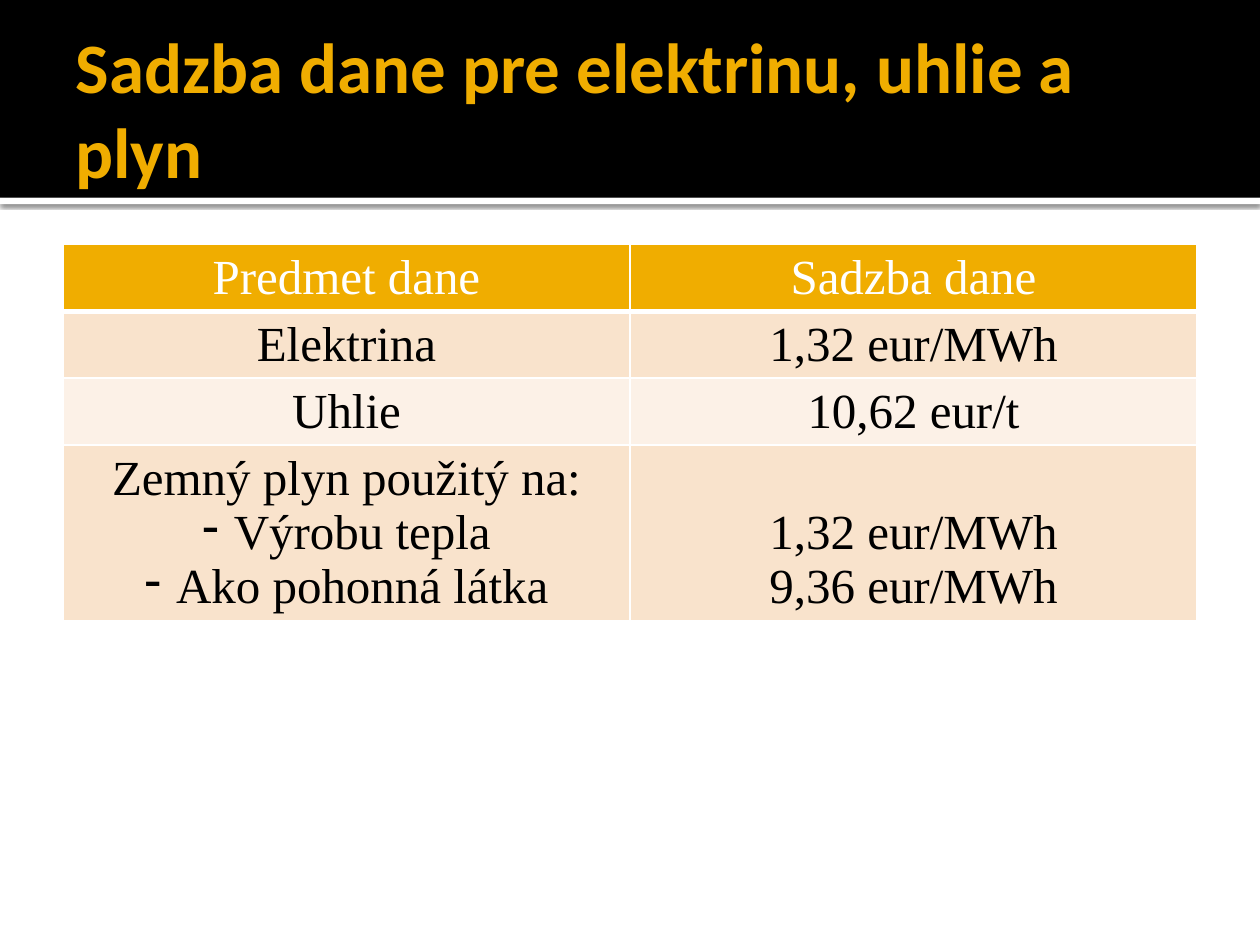
import pptx
import pptx.util
import pptx.dml.color
import pptx.enum.shapes
import pptx.enum.text
import pptx.oxml
import pptx.oxml.ns

Inches, Pt = pptx.util.Inches, pptx.util.Pt
ALIGN = pptx.enum.text.PP_ALIGN
ANCHOR = pptx.enum.text.MSO_ANCHOR
NS = pptx.oxml.ns.nsdecls("a")

BLACK, WHITE, GOLD = "000000", "FFFFFF", "F0AD00"
DARK, LIGHT = "F9E3CC", "FCF1E7"
ROWS = [
    (["Predmet dane"], ["Sadzba dane"]),
    (["Elektrina"], ["1,32 eur/MWh"]),
    (["Uhlie"], ["10,62 eur/t"]),
    (["Zemný plyn použitý na:", "- Výrobu tepla", "- Ako pohonná látka"],
     ["1,32 eur/MWh", "9,36 eur/MWh"]),
]
HEIGHTS = [0.53, 0.53, 0.53, 1.39]


def rgb(color):
    return pptx.dml.color.RGBColor.from_string(color)


def add_bar(slide, box, color):
    bar = slide.shapes.add_shape(
        pptx.enum.shapes.MSO_SHAPE.RECTANGLE, *map(Inches, box))
    bar.shadow.inherit = False
    bar.fill.solid()
    bar.fill.fore_color.rgb = rgb(color)
    bar.line.fill.background()
    return bar


def add_shadow(shape):
    effects = shape._element.spPr.find(pptx.oxml.ns.qn("a:effectLst"))
    effects.append(pptx.oxml.parse_xml(
        f'<a:outerShdw {NS} blurRad="{Pt(2.5)}" dist="{Pt(0.8)}" dir="5400000" '
        f'algn="t" rotWithShape="0"><a:srgbClr val="{BLACK}">'
        '<a:alpha val="60000"/></a:srgbClr></a:outerShdw>'))


def add_header(slide, box, text):
    left, top, width, height = box
    # White strip with a shadow under the black band
    add_shadow(add_bar(slide, (left, top + height, width, 0.05), WHITE))
    add_bar(slide, box, BLACK)

    # Title, brought in front of the band
    title = slide.shapes.title
    slide.shapes.element.append(title.element)
    title.left, title.top = Inches(left + 0.5), Inches(top + 0.17)
    title.width, title.height = Inches(width - 1), Inches(height - 0.2)
    frame = title.text_frame
    frame.text = text
    frame.word_wrap = True
    frame.auto_size = pptx.enum.text.MSO_AUTO_SIZE.NONE
    frame.vertical_anchor = ANCHOR.MIDDLE
    frame.margin_left = Inches(0.1)
    frame.margin_right = frame.margin_top = frame.margin_bottom = Inches(0.05)
    para = frame.paragraphs[0]
    para.alignment = ALIGN.LEFT
    font = para.font
    font.name, font.size, font.bold = "Calibri", Pt(40.5), True
    font.color.rgb = rgb(GOLD)


def set_borders(cell, head):
    props = cell._tc.get_or_add_tcPr()
    for place, side in enumerate("LRTB"):
        width = 3 if head and side == "B" else 1
        props.insert(place, pptx.oxml.parse_xml(
            f'<a:ln{side} {NS} w="{Pt(width)}"><a:solidFill>'
            f'<a:srgbClr val="{WHITE}"/></a:solidFill></a:ln{side}>'))


def set_bullet(para):
    props = para._p.get_or_add_pPr()
    props.set("marL", str(Inches(0.25)))
    props.set("indent", str(-Inches(0.25)))
    props.append(pptx.oxml.parse_xml(f'<a:buChar {NS} char="-"/>'))


def fill_cell(cell, lines, fill, color, head):
    cell.fill.solid()
    cell.fill.fore_color.rgb = rgb(fill)
    set_borders(cell, head)
    frame = cell.text_frame
    for i, line in enumerate(lines):
        para = frame.add_paragraph() if i else frame.paragraphs[0]
        para.text = line.removeprefix("- ")
        para.alignment = ALIGN.CENTER
        para.font.name, para.font.size = "Times New Roman", Pt(28)
        para.font.color.rgb = rgb(color)
        if line.startswith("- "):
            set_bullet(para)


def add_rates(slide, box):
    table = slide.shapes.add_table(len(ROWS), 2, *map(Inches, box)).table
    for i, (row, height) in enumerate(zip(ROWS, HEIGHTS)):
        table.rows[i].height = Inches(height)
        head = i == 0
        fill = GOLD if head else (DARK if i % 2 else LIGHT)
        for j, lines in enumerate(row):
            fill_cell(table.cell(i, j), lines, fill, WHITE if head else BLACK, head)
    # The two gas rates line up with the last two lines beside them
    table.cell(len(ROWS) - 1, 1).vertical_anchor = ANCHOR.BOTTOM
    # Plain header weight
    table.first_row = False


def main():
    deck = pptx.Presentation()
    deck.slide_width, deck.slide_height = Inches(10), Inches(7.5)
    slide = deck.slides.add_slide(deck.slide_layouts[5])
    add_header(slide, (0, 0, 10, 1.57), "Sadzba dane pre elektrinu, uhlie a plyn")
    add_rates(slide, (0.5, 1.94, 9, sum(HEIGHTS)))
    deck.save("out.pptx")


if __name__ == "__main__":
    main()
